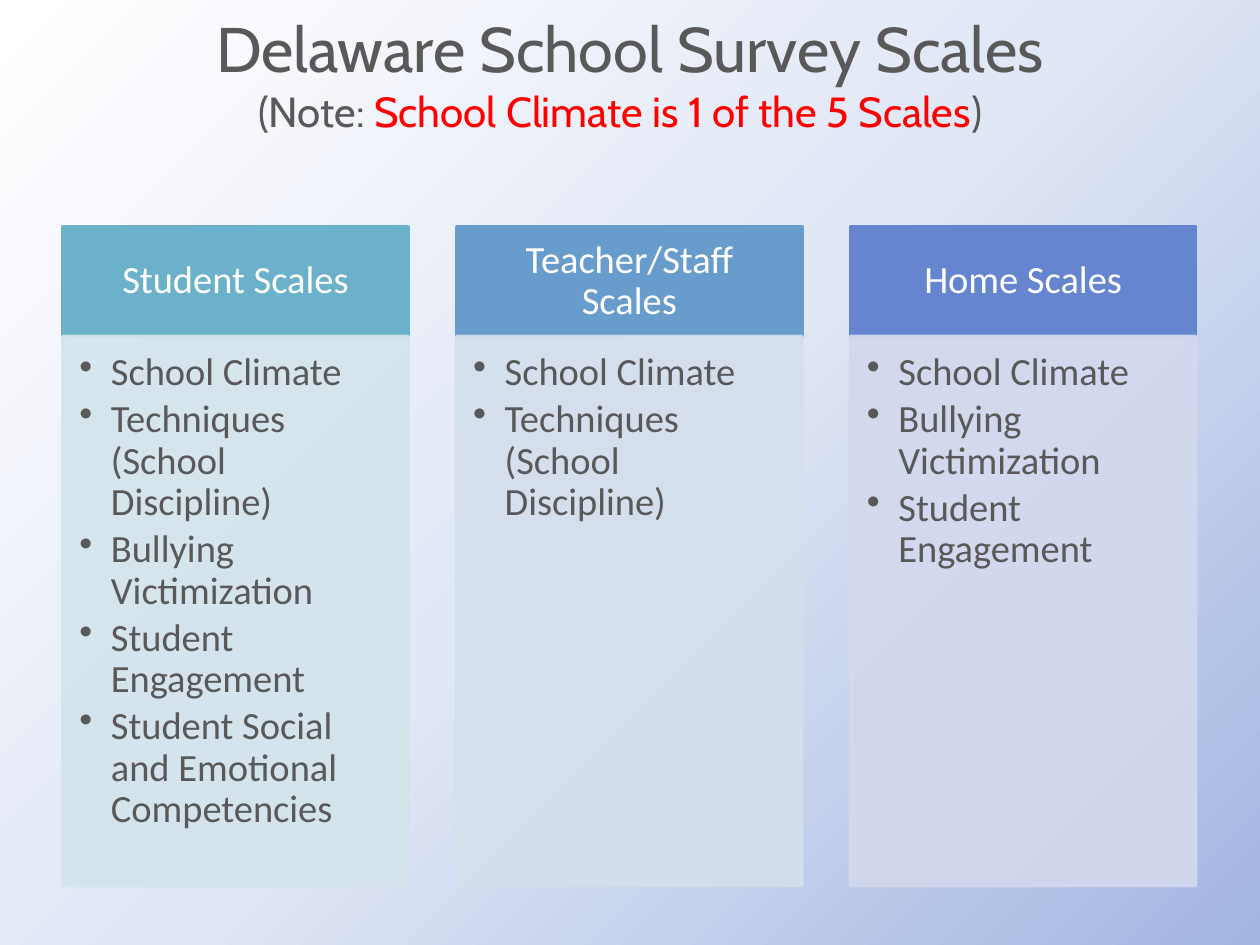
from pptx import Presentation
from pptx.dml.color import RGBColor
from pptx.enum.shapes import MSO_SHAPE
from pptx.enum.text import MSO_ANCHOR, PP_ALIGN
from pptx.oxml import parse_xml
from pptx.oxml.ns import nsdecls, qn
from pptx.util import Pt
from lxml.etree import SubElement

HUES = {"text": "595959", "red": "FF0000", "white": "FFFFFF",
        "teal": "6BB1C9", "pale teal": "D4E4EB",
        "blue": "689CCC", "pale blue": "D4DFEC",
        "navy": "6585CF", "pale navy": "D3D9ED"}
SWEEP = ((0, "A3B6E2"), (50, "E0E7F5"), (100, "FFFFFF"))

LEFT, STEP, WIDE = 36, 225, 197.3
TOP, HEAD, BODY = 129.6, 62.6, 313.9

SCALES = (
    ("Student Scales", "teal",
     ("School Climate", "Techniques (School Discipline)",
      "Bullying Victimization", "Student Engagement",
      "Student Social and Emotional Competencies")),
    ("Teacher/Staff Scales", "blue",
     ("School Climate", "Techniques (School Discipline)")),
    ("Home Scales", "navy",
     ("School Climate", "Bullying Victimization", "Student Engagement")),
)


def paint(slide):
    """Fill the background with a sweep out of the lower right corner."""
    slide.background.fill.gradient()
    old = slide.element.find(".//" + qn("a:gradFill"))
    stops = "".join(f'<a:gs pos="{at * 1000}"><a:srgbClr val="{hue}"/></a:gs>'
                    for at, hue in SWEEP)
    new = parse_xml(
        f'<a:gradFill {nsdecls("a")} rotWithShape="1"><a:gsLst>{stops}</a:gsLst>'
        '<a:path path="circle"><a:fillToRect l="100000" t="100000"/></a:path>'
        '</a:gradFill>')
    old.getparent().replace(old, new)


def add_run(para, text, size, hue="text", face="Calibri"):
    run = para.add_run()
    run.text = text
    run.font.size = Pt(size)
    run.font.name = face
    run.font.color.rgb = RGBColor.from_string(HUES[hue])


def set_pads(frame, left, top, right, bottom):
    frame.word_wrap = True
    frame.margin_left, frame.margin_top = Pt(left), Pt(top)
    frame.margin_right, frame.margin_bottom = Pt(right), Pt(bottom)


def add_box(slide, left, top, high, hue):
    box = slide.shapes.add_shape(MSO_SHAPE.RECTANGLE, Pt(left), Pt(top),
                                 Pt(WIDE), Pt(high))
    box.shadow.inherit = False
    box.line.width = Pt(2)
    for fill in (box.fill, box.line.fill):
        fill.solid()
        fill.fore_color.rgb = RGBColor.from_string(HUES[hue])
    return box


def fade(box, share):
    """Make the fill and line of a box partly clear."""
    for tint in box.element.spPr.iter(qn("a:srgbClr")):
        SubElement(tint, qn("a:alpha")).set("val", str(share * 1000))


def add_mark(para):
    """Give a paragraph a hanging bullet."""
    props = para._p.get_or_add_pPr()
    props.set("marL", str(Pt(18)))
    props.set("indent", str(-Pt(18)))
    SubElement(props, qn("a:buChar")).set("char", "•")


def add_title(slide):
    box = slide.shapes.add_textbox(Pt(36), Pt(5.5), Pt(648), Pt(80))
    frame = box.text_frame
    set_pads(frame, 7.2, 0, 7.2, 0)
    main_line, note = frame.paragraphs[0], frame.add_paragraph()
    main_line.alignment = note.alignment = PP_ALIGN.CENTER
    add_run(main_line, "Delaware School Survey Scales", 36, face="Cabin")
    # The note sits slightly left of centre
    note._p.get_or_add_pPr().set("marR", str(Pt(11)))
    for text, hue in (("(Note: ", "text"),
                      ("School Climate is 1 of the 5 Scales", "red"),
                      (")", "text")):
        add_run(note, text, 24, hue, "Cabin")


def add_head(slide, left, text, hue):
    frame = add_box(slide, left, TOP, HEAD, hue).text_frame
    set_pads(frame, 12.2, 7.2, 12.2, 7.2)
    frame.vertical_anchor = MSO_ANCHOR.MIDDLE
    para = frame.paragraphs[0]
    para.alignment = PP_ALIGN.CENTER
    para.line_spacing = 0.9
    add_run(para, text, 22, "white")


def add_list(slide, left, items, hue):
    box = add_box(slide, left, TOP + HEAD, BODY, hue)
    fade(box, 90)
    frame = box.text_frame
    set_pads(frame, 9.4, 9.4, 12.2, 13.7)
    frame.vertical_anchor = MSO_ANCHOR.TOP
    for i, item in enumerate(items):
        para = frame.add_paragraph() if i else frame.paragraphs[0]
        para.alignment = PP_ALIGN.LEFT
        para.line_spacing = 0.9
        para.space_after = Pt(3)
        add_mark(para)
        add_run(para, item, 22)


def main():
    deck = Presentation()
    deck.slide_width, deck.slide_height = Pt(720), Pt(540)
    slide = deck.slides.add_slide(deck.slide_layouts[6])
    paint(slide)
    add_title(slide)
    # One column for each survey
    for i, (name, hue, items) in enumerate(SCALES):
        left = LEFT + i * STEP
        add_head(slide, left, name, hue)
        add_list(slide, left, items, "pale " + hue)
    deck.save("out.pptx")


if __name__ == "__main__":
    main()
